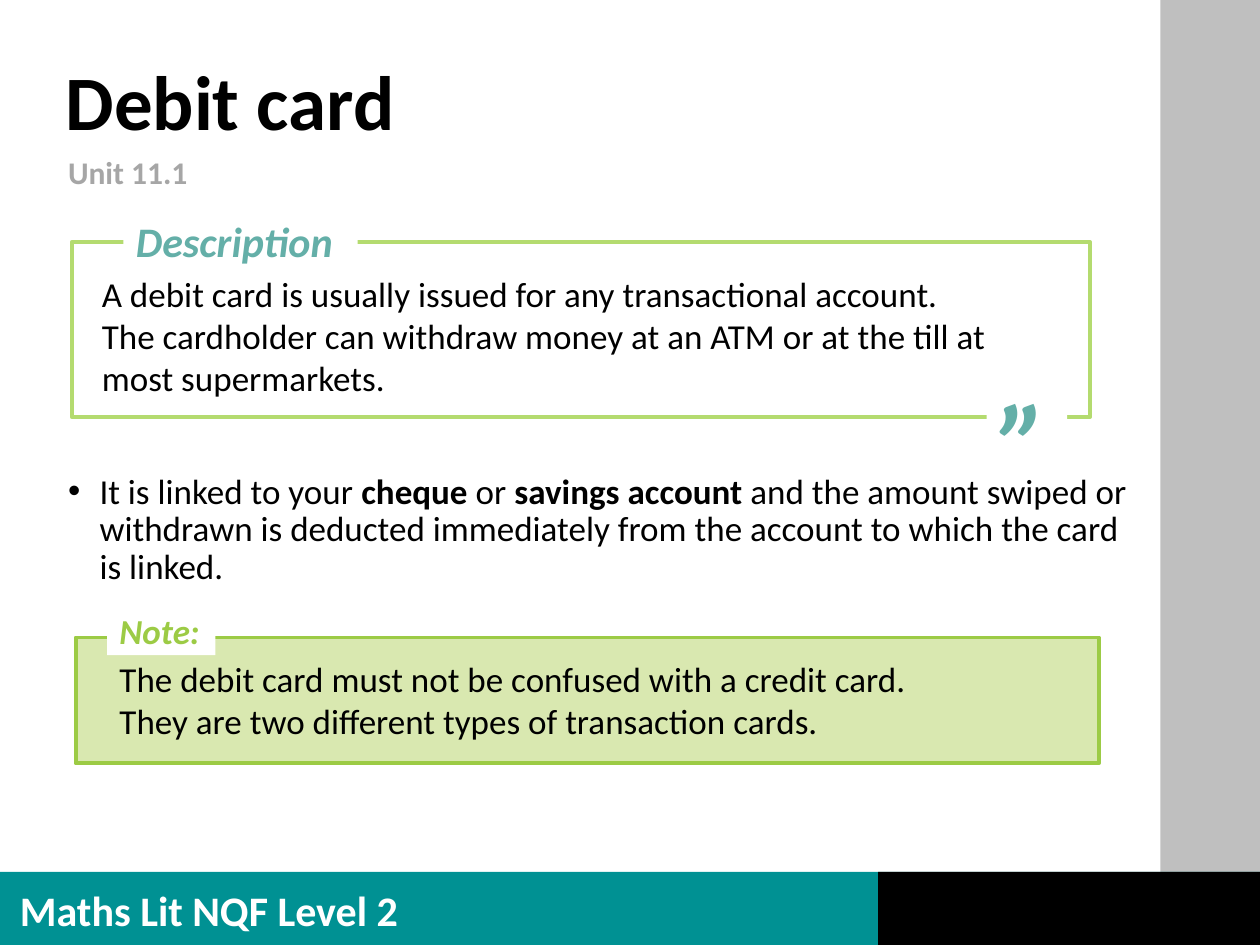
from lxml import etree
from pptx import Presentation
from pptx.dml.color import RGBColor
from pptx.enum.shapes import MSO_SHAPE
from pptx.enum.text import MSO_ANCHOR, MSO_AUTO_SIZE, PP_ALIGN
from pptx.oxml.ns import qn
from pptx.util import Inches, Pt

RECTANGLE = MSO_SHAPE.RECTANGLE
TWO_CONTENT = 3
FONT = "Calibri"
COLOURS = {
    "text": "000000", "white": "FFFFFF", "grey": "A6A6A6", "side": "BFBFBF",
    "teal": "009193", "heading": "64AFA8", "frame": "B4DB6F",
    "note": "9CCB45", "note_fill": "D9E8B0",
}

# Boxes are (left, top, width, height) in inches.
BANDS = [
    ((9.21, 0, 0.79, 7.5), "side"),
    ((0, 6.92, 10, 0.58), "teal"),
    ((6.97, 6.92, 3.03, 0.58), "text"),
]
COURSE = "Maths Lit NQF Level 2"
TITLE = "Debit card"
UNIT = "Unit 11.1"
DESCRIPTION = [
    "A debit card is usually issued for any transactional account.",
    "The cardholder can withdraw money at an ATM or at the till at most supermarkets.",
]
# Each run is (text, bold).
LINKED_ACCOUNTS = [
    ("It is linked to your ", False),
    ("cheque", True),
    (" or ", False),
    ("savings account ", True),
    ("and the amount swiped or withdrawn is deducted immediately from "
     "the account to which the card is linked.", False),
]
NOTE = ["The debit card must not be confused with a credit card. "
        "They are two different types of transaction cards."]


def colour(name):
    return RGBColor.from_string(COLOURS[name])


def place(shape, box):
    shape.left, shape.top, shape.width, shape.height = map(Inches, box)


def write(shape, paragraphs, size, color="text", spacing=1.0, bold=False, italic=False):
    """Fill a shape with paragraphs, each a string or a list of (text, bold) runs."""
    frame = shape.text_frame
    frame.word_wrap = True
    frame.auto_size = MSO_AUTO_SIZE.NONE
    frame.vertical_anchor = MSO_ANCHOR.TOP
    for index, content in enumerate(paragraphs):
        paragraph = frame.add_paragraph() if index else frame.paragraphs[0]
        paragraph.alignment = PP_ALIGN.LEFT
        paragraph.line_spacing = spacing
        paragraph.space_before = Pt(0)
        runs = [(content, bold)] if isinstance(content, str) else content
        for text, run_bold in runs:
            run = paragraph.add_run()
            run.text = text
            font_format = {"name": FONT, "size": Pt(size), "bold": run_bold, "italic": italic}
            for attribute, value in font_format.items():
                setattr(run.font, attribute, value)
            run.font.color.rgb = colour(color)


def set_bullet(paragraph, character, indent):
    """Give the paragraph a bullet character, or none."""
    properties = paragraph._p.get_or_add_pPr()
    properties.set("marL", str(Inches(indent)))
    properties.set("indent", str(-Inches(indent)))
    if character:
        etree.SubElement(properties, qn("a:buChar")).set("char", character)
    else:
        etree.SubElement(properties, qn("a:buNone"))


def add_rectangle(shapes, box, fill=None, line=None):
    rectangle = shapes.add_shape(RECTANGLE, *map(Inches, box))
    rectangle.shadow.inherit = False
    if fill:
        rectangle.fill.solid()
        rectangle.fill.fore_color.rgb = colour(fill)
    else:
        rectangle.fill.background()
    if line:
        rectangle.line.color.rgb = colour(line)
        rectangle.line.width = Pt(2.25)
    else:
        rectangle.line.fill.background()
    return rectangle


def add_label(shapes, box, text, size, color):
    """Add a white patch that breaks a frame line and carries a heading."""
    patch = add_rectangle(shapes, box, fill="white")
    write(patch, [text], size, color, spacing=0.9, bold=True, italic=True)


def add_text(shapes, box, paragraphs, size, **formats):
    write(shapes.add_textbox(*map(Inches, box)), paragraphs, size, **formats)


def main():
    presentation = Presentation()
    presentation.slide_width, presentation.slide_height = Inches(10), Inches(7.5)
    slide = presentation.slides.add_slide(presentation.slide_layouts[TWO_CONTENT])
    shapes = slide.shapes
    title, unit, body = list(slide.placeholders)[:3]
    for placeholder in list(slide.placeholders)[3:]:
        placeholder.element.getparent().remove(placeholder.element)

    for box, fill in BANDS:
        add_rectangle(shapes, box, fill)
    add_text(shapes, (0.06, 6.97, 3.75, 0.5), [COURSE], 24, color="white", bold=True)

    place(title, (0.42, 0.46, 8.65, 0.79))
    write(title, [TITLE], 44, spacing=0.9, bold=True)
    place(unit, (0.44, 1.2, 8.65, 0.33))
    write(unit, [UNIT], 18, "grey", spacing=0.9, bold=True)
    set_bullet(unit.text_frame.paragraphs[0], None, 0)
    place(body, (0.44, 3.71, 8.65, 1.05))
    write(body, [LINKED_ACCOUNTS], 20, spacing=0.9)
    set_bullet(body.text_frame.paragraphs[0], "•", 0.25)

    add_rectangle(shapes, (0.57, 1.92, 8.08, 1.39), line="frame")
    add_label(shapes, (0.98, 1.71, 1.86, 0.37), "Description", 24, "heading")
    add_text(shapes, (0.71, 2.11, 7.81, 1.11), DESCRIPTION, 20)
    add_label(shapes, (7.83, 3.03, 0.64, 0.57), "”", 66, "heading")

    note_shapes = shapes.add_group_shape().shapes
    add_rectangle(note_shapes, (0.6, 5.06, 8.12, 1), "note_fill", "note")
    add_label(note_shapes, (0.85, 4.83, 0.86, 0.37), "Note:", 20, "note")
    add_text(note_shapes, (0.85, 5.17, 6.76, 0.77), NOTE, 20)

    presentation.save("out.pptx")


if __name__ == "__main__":
    main()
